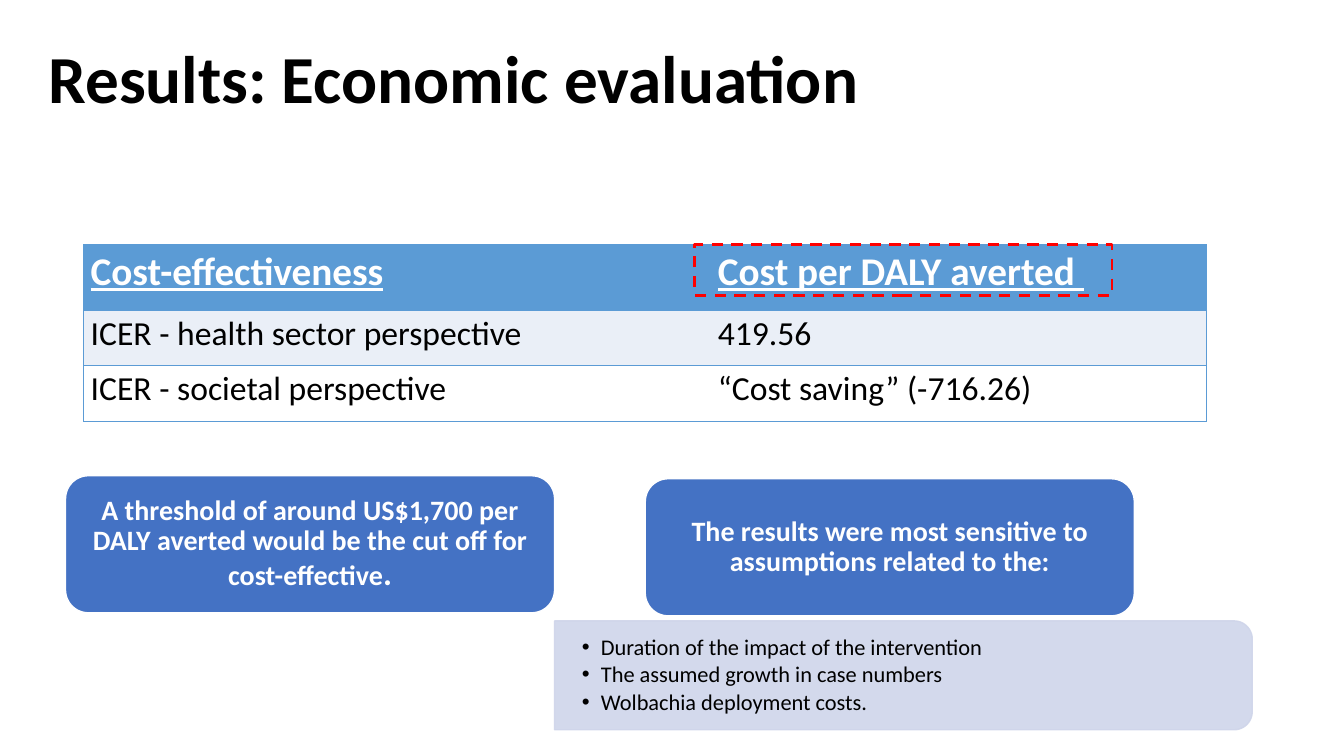
import math

from lxml import etree
from pptx import Presentation
from pptx.dml.color import RGBColor
from pptx.enum.dml import MSO_LINE
from pptx.enum.shapes import MSO_SHAPE
from pptx.enum.text import MSO_ANCHOR, PP_ALIGN
from pptx.oxml.ns import qn
from pptx.util import Pt

PX = 9144
FONT = "Calibri"
BLACK = RGBColor(0x00, 0x00, 0x00)
WHITE = RGBColor(0xFF, 0xFF, 0xFF)
RED = RGBColor(0xFF, 0x00, 0x00)
BLUE = RGBColor(0x44, 0x72, 0xC4)
TABLE_BLUE = RGBColor(0x5B, 0x9B, 0xD5)
BAND = RGBColor(0xEA, 0xEF, 0xF7)
LAVENDER = RGBColor(0xCF, 0xD5, 0xEA)
RECTANGLE = MSO_SHAPE.RECTANGLE
ROUNDED = MSO_SHAPE.ROUNDED_RECTANGLE
DASH = MSO_LINE.DASH
MIDDLE = MSO_ANCHOR.MIDDLE
TOP = MSO_ANCHOR.TOP
LEFT = PP_ALIGN.LEFT
CENTER = PP_ALIGN.CENTER


def style_paragraph(paragraph, size, color, bold, spacing, after, alignment=LEFT):
    paragraph.alignment = alignment
    paragraph.line_spacing = spacing
    paragraph.space_before = Pt(0)
    paragraph.space_after = Pt(after)
    for run in paragraph.runs:
        run.font.name = FONT
        run.font.size = Pt(size)
        run.font.bold = bold
        run.font.color.rgb = color


def set_margins(frame, left, top, right, bottom):
    frame.margin_left = left * PX
    frame.margin_top = top * PX
    frame.margin_right = right * PX
    frame.margin_bottom = bottom * PX


presentation = Presentation()
presentation.slide_width = 1333 * PX
presentation.slide_height = 750 * PX
slide = presentation.slides.add_slide(presentation.slide_layouts[5])
shapes = slide.shapes

title = shapes.title
title.left, title.top, title.width, title.height = 38 * PX, 9 * PX, 1150 * PX, 145 * PX
title.text_frame.text = "Results: Economic evaluation"
title.text_frame.vertical_anchor = MIDDLE
style_paragraph(title.text_frame.paragraphs[0], 48, BLACK, True, 0.9, 0)

rows = [
    ("Cost-effectiveness", "Cost per DALY averted "),
    ("ICER - health sector perspective", "419.56"),
    ("ICER - societal perspective", "“Cost saving” (-716.26)"),
]
row_heights = [65, 55, 55]
row_fills = [TABLE_BLUE, BAND, WHITE]
table = shapes.add_table(3, 2, 83 * PX, 243 * PX, 1114 * PX, 175 * PX).table
table.columns[0].width = 622 * PX
table.columns[1].width = 492 * PX
for row_index, texts in enumerate(rows):
    table.rows[row_index].height = row_heights[row_index] * PX
    header = row_index == 0
    for column_index, text in enumerate(texts):
        cell = table.cell(row_index, column_index)
        cell.text_frame.text = text
        cell.vertical_anchor = TOP
        set_margins(cell, 7, 0, 7, 0)
        paragraph = cell.text_frame.paragraphs[0]
        style_paragraph(paragraph, 28 if header else 24, WHITE if header else BLACK, header, 1.07, 8)
        paragraph.runs[0].font.underline = header
        hidden_side = "a:lnR" if column_index == 0 else "a:lnL"
        properties = cell._tc.get_or_add_tcPr()
        for side in ("a:lnL", "a:lnR", "a:lnT", "a:lnB"):
            border = etree.SubElement(properties, qn(side), w="12700")
            if side == hidden_side:
                etree.SubElement(border, qn("a:noFill"))
            else:
                fill = etree.SubElement(border, qn("a:solidFill"))
                etree.SubElement(fill, qn("a:srgbClr"), val=str(TABLE_BLUE))
        cell.fill.solid()
        cell.fill.fore_color.rgb = row_fills[row_index]

callouts = [
    (65, 472, [("A threshold of around US$1,700 per DALY averted would be the cut off for cost-effective", 20), (".", 24)]),
    (640, 475, [("The results were most sensitive to assumptions related to the:", 20)]),
]
for left, top, parts in callouts:
    callout = shapes.add_shape(ROUNDED, left * PX, top * PX, 485 * PX, 136 * PX)
    callout.shadow.inherit = False
    callout.fill.solid()
    callout.fill.fore_color.rgb = BLUE
    callout.line.color.rgb = WHITE
    callout.line.width = Pt(1)
    frame = callout.text_frame
    frame.word_wrap = True
    frame.vertical_anchor = MIDDLE
    set_margins(frame, 15, 11, 15, 11)
    paragraph = frame.paragraphs[0]
    for text, size in parts:
        paragraph.add_run().text = text
    style_paragraph(paragraph, 20, WHITE, True, 0.9, 7, CENTER)
    for run, (text, size) in zip(paragraph.runs, parts):
        run.font.size = Pt(size)

panel_left, panel_top, panel_right, panel_bottom, radius = 550, 616, 1242, 724, 18
points = [(panel_left, panel_top)]
for center_y, start_angle in ((panel_top + radius, -90), (panel_bottom - radius, 0)):
    for angle in range(start_angle, start_angle + 91, 6):
        radians = math.radians(angle)
        points.append((panel_right - radius + radius * math.cos(radians), center_y + radius * math.sin(radians)))
points.append((panel_left, panel_bottom))
outline = [(round(x * PX), round(y * PX)) for x, y in points]
builder = shapes.build_freeform(*outline[0])
builder.add_line_segments(outline[1:], close=True)
panel = builder.convert_to_shape()
panel.shadow.inherit = False
panel.fill.solid()
panel.fill.fore_color.rgb = LAVENDER
panel.line.color.rgb = LAVENDER
panel.line.width = Pt(1)
for color in panel._element.spPr.iter(qn("a:srgbClr")):
    etree.SubElement(color, qn("a:alpha"), val="90000")
frame = panel.text_frame
frame.word_wrap = True
frame.vertical_anchor = MIDDLE
set_margins(frame, 27, 19, 32, 19)
frame.text = "\n".join([
    "Duration of the impact of the intervention",
    "The assumed growth in case numbers",
    "Wolbachia deployment costs.",
])
for paragraph in frame.paragraphs:
    style_paragraph(paragraph, 16, BLACK, False, 0.9, 2.4)
    paragraph.level = 1
    properties = paragraph._p.get_or_add_pPr()
    properties.set("marL", str(19 * PX))
    properties.set("indent", str(-19 * PX))
    etree.SubElement(properties, qn("a:buFont"), typeface="Arial")
    etree.SubElement(properties, qn("a:buChar"), char="•")

highlight = shapes.add_shape(RECTANGLE, 689 * PX, 243 * PX, 414 * PX, 50 * PX)
highlight.shadow.inherit = False
highlight.fill.background()
highlight.line.color.rgb = RED
highlight.line.width = Pt(2)
highlight.line.dash_style = DASH

presentation.save("out.pptx")
